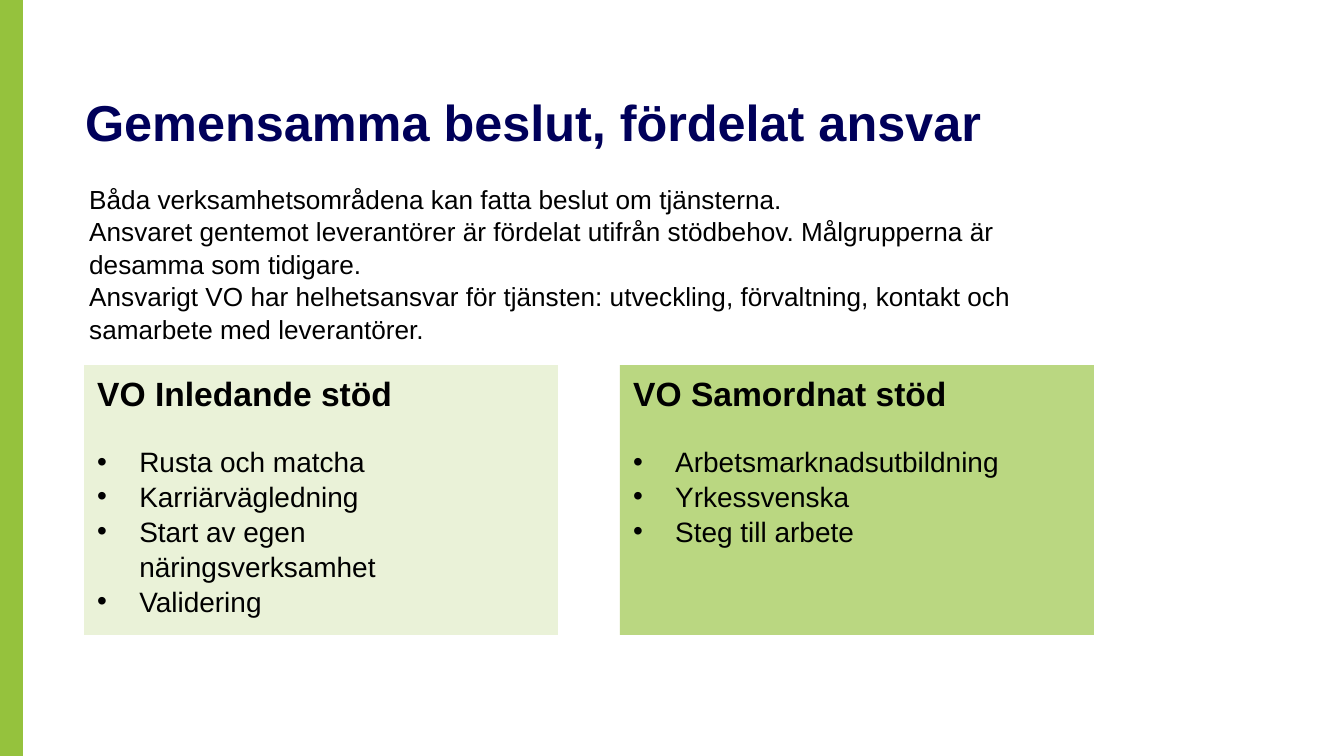
"""Build a slide on shared decisions and divided responsibility."""
from dataclasses import dataclass

from lxml.etree import SubElement
from pptx import Presentation
from pptx.dml.color import RGBColor
from pptx.enum.shapes import MSO_SHAPE
from pptx.enum.text import MSO_ANCHOR, MSO_AUTO_SIZE, PP_ALIGN
from pptx.oxml.ns import qn
from pptx.shapes.autoshape import Shape
from pptx.slide import Slide
from pptx.text.text import TextFrame, _Paragraph
from pptx.util import Emu, Pt

SCALE = 6804
FONT = "Arial"
NAVY = RGBColor(0x00, 0x00, 0x5A)
BLACK = RGBColor(0x00, 0x00, 0x00)
GREEN = RGBColor(0x95, 0xC2, 0x3D)
PALE = RGBColor(0xEA, 0xF2, 0xD8)
LIGHT = RGBColor(0xBA, 0xD7, 0x81)
PITCH = 1.04
INDENT = 42
TITLE = "Gemensamma beslut, fördelat ansvar"
INTRO = (
    "Båda verksamhetsområdena kan fatta beslut om tjänsterna.",
    "Ansvaret gentemot leverantörer är fördelat utifrån stödbehov. "
    "Målgrupperna är desamma som tidigare.",
    "Ansvarigt VO har helhetsansvar för tjänsten: utveckling, förvaltning, "
    "kontakt och samarbete med leverantörer.",
)


@dataclass(frozen=True)
class Box:
    """Hold a position and size in px."""
    left: int
    top: int
    width: int
    height: int

    def emu(self) -> tuple[Emu, ...]:
        """Return the four lengths in EMU."""
        return tuple(px(n) for n in (self.left, self.top, self.width, self.height))


@dataclass(frozen=True)
class Card:
    """Describe one area and its services."""
    head: str
    items: tuple[str, ...]
    fill: RGBColor


CARDS = (
    Card("VO Inledande stöd",
         ("Rusta och matcha", "Karriärvägledning",
          "Start av egen näringsverksamhet", "Validering"), PALE),
    Card("VO Samordnat stöd",
         ("Arbetsmarknadsutbildning", "Yrkessvenska", "Steg till arbete"), LIGHT),
)


def px(n: int) -> Emu:
    """Turn px into EMU."""
    return Emu(n * SCALE)


def line(frame: TextFrame, first: bool = False) -> _Paragraph:
    """Return the first or a new left-aligned paragraph."""
    para = frame.paragraphs[0] if first else frame.add_paragraph()
    para.alignment = PP_ALIGN.LEFT
    para.line_spacing = PITCH
    return para


def write(para: _Paragraph, text: str, size: int,
          bold: bool = False, color: RGBColor = BLACK) -> None:
    """Add one formatted run."""
    run = para.add_run()
    run.text = text
    font = run.font
    font.name, font.size, font.bold = FONT, Pt(size), bold
    font.color.rgb = color


def bullet(para: _Paragraph) -> None:
    """Give a paragraph a hanging bullet."""
    props = para._p.get_or_add_pPr()
    props.set("marL", str(px(INDENT)))
    props.set("indent", str(-px(INDENT)))
    SubElement(props, qn("a:buFont"), typeface=FONT)
    SubElement(props, qn("a:buChar"), char="•")


def block(slide: Slide, box: Box, fill: RGBColor) -> Shape:
    """Draw a plain filled rectangle."""
    shape = slide.shapes.add_shape(MSO_SHAPE.RECTANGLE, *box.emu())
    shape.shadow.inherit = False
    shape.fill.solid()
    shape.fill.fore_color.rgb = fill
    shape.line.fill.background()
    return shape


def panel(slide: Slide, box: Box, card: Card) -> None:
    """Draw a card with a heading and bullets."""
    frame = block(slide, box, card.fill).text_frame
    frame.word_wrap = True
    frame.vertical_anchor = MSO_ANCHOR.TOP
    write(line(frame, True), card.head, 18, True)
    for i, item in enumerate(card.items):
        para = line(frame)
        if i == 0:
            para.space_before = Pt(16)
        bullet(para)
        write(para, item, 15)


def head(slide: Slide, box: Box) -> None:
    """Place and format the title."""
    shape = slide.shapes.title
    shape.left, shape.top, shape.width, shape.height = box.emu()
    frame = shape.text_frame
    frame.margin_left = frame.margin_right = 0
    frame.margin_top = frame.margin_bottom = 0
    frame.word_wrap = True
    frame.auto_size = MSO_AUTO_SIZE.NONE
    frame.vertical_anchor = MSO_ANCHOR.TOP
    write(line(frame, True), TITLE, 27, True, NAVY)


def intro(slide: Slide, box: Box) -> None:
    """Add the introductory paragraphs."""
    frame = slide.shapes.add_textbox(*box.emu()).text_frame
    frame.word_wrap = True
    frame.auto_size = MSO_AUTO_SIZE.SHAPE_TO_FIT_TEXT
    for i, text in enumerate(INTRO):
        write(line(frame, i == 0), text, 14)


def main() -> None:
    """Build and save the deck."""
    deck = Presentation()
    deck.slide_width, deck.slide_height = px(1344), px(756)
    slide = deck.slides.add_slide(deck.slide_layouts[5])
    bar = block(slide, Box(0, 0, 22, 756), GREEN)
    bar.line.color.rgb = GREEN
    bar.line.width = Pt(1)
    head(slide, Box(85, 89, 1025, 99))
    for i, card in enumerate(CARDS):
        panel(slide, Box(84 + i * 536, 365, 474, 270), card)
    intro(slide, Box(76, 175, 1019, 172))
    deck.save("out.pptx")


if __name__ == "__main__":
    main()
